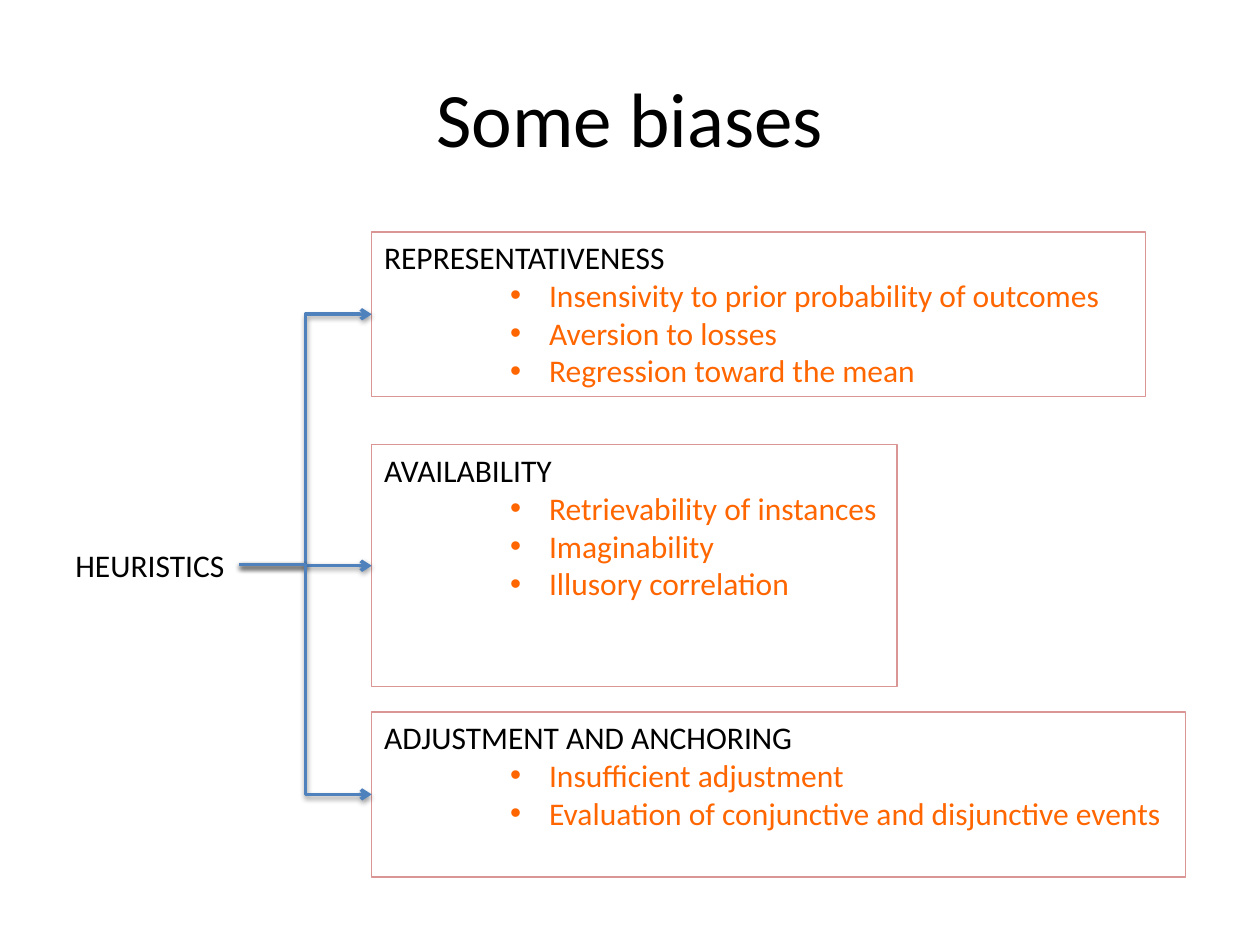
from lxml import etree
from pptx import Presentation
from pptx.dml.color import RGBColor
from pptx.enum import shapes, text
from pptx.oxml import ns
from pptx.util import Inches, Pt

FONT = "Calibri"
BLACK, ORANGE, PINK, BLUE = "000000", "FF6600", "D99694", "4F81BD"
BOX_LEFT = 2.95
BRANCH_START = (1.9, 4.48)

# top, width, height, heading, biases
HEURISTICS = [
    (1.84, 6.14, 1.31, "REPRESENTATIVENESS",
     ["Insensivity to prior probability of outcomes", "Aversion to losses",
      "Regression toward the mean"]),
    (3.53, 4.17, 1.92, "AVAILABILITY",
     ["Retrievability of instances", "Imaginability", "Illusory correlation"]),
    (5.65, 6.46, 1.31, "ADJUSTMENT AND ANCHORING",
     ["Insufficient adjustment",
      "Evaluation of conjunctive and disjunctive events"]),
]


def color(value):
    return RGBColor.from_string(value)


def add_xml(parent, tag, **attributes):
    element = etree.SubElement(parent, ns.qn(tag))
    for name, value in attributes.items():
        element.set(name, str(value))
    return element


def format_runs(paragraph, size, value):
    for run in paragraph.runs:
        run.font.name = FONT
        run.font.size = Pt(size)
        run.font.color.rgb = color(value)


def add_label(slide, left, top, width, height, content, size, align, wrap):
    box = slide.shapes.add_textbox(*map(Inches, (left, top, width, height)))
    frame = box.text_frame
    frame.text = content
    frame.word_wrap = wrap
    frame.vertical_anchor = text.MSO_ANCHOR.MIDDLE
    frame.paragraphs[0].alignment = align
    format_runs(frame.paragraphs[0], size, BLACK)


def add_bullet(paragraph):
    paragraph.level = 2
    properties = paragraph._p.get_or_add_pPr()
    properties.set("marL", str(Inches(1.31)))
    properties.set("indent", str(Inches(-0.31)))
    add_xml(properties, "a:buFont", typeface="Arial")
    add_xml(properties, "a:buChar", char="•")


def add_bias_box(slide, top, width, height, heading, biases):
    box = slide.shapes.add_shape(
        shapes.MSO_SHAPE.RECTANGLE,
        *map(Inches, (BOX_LEFT, top, width, height)))
    box.shadow.inherit = False
    box.fill.background()
    box.line.color.rgb = color(PINK)
    box.line.width = Pt(0.75)
    frame = box.text_frame
    frame.word_wrap = True
    frame.vertical_anchor = text.MSO_ANCHOR.TOP
    frame.text = "\n".join([heading, *biases])
    for index, paragraph in enumerate(frame.paragraphs):
        paragraph.alignment = text.PP_ALIGN.LEFT
        if index:
            add_bullet(paragraph)
        format_runs(paragraph, 18, ORANGE if index else BLACK)


def add_branch(slide, end_y):
    """Draw an elbow arrow with a soft shadow from the root label to a box."""
    branch = slide.shapes.add_connector(
        shapes.MSO_CONNECTOR.ELBOW,
        *map(Inches, (*BRANCH_START, BOX_LEFT, end_y)))
    branch.line.color.rgb = color(BLUE)
    branch.line.width = Pt(2)
    add_xml(branch.line._get_or_add_ln(), "a:tailEnd", type="arrow")
    effects = add_xml(branch._element.spPr, "a:effectLst")
    shadow = add_xml(effects, "a:outerShdw", blurRad=Pt(3.1), dist=Pt(1.6),
                     dir=90 * 60000, rotWithShape=0)
    shadow_color = add_xml(shadow, "a:srgbClr", val=BLACK)
    add_xml(shadow_color, "a:alpha", val=38000)


def main():
    presentation = Presentation()
    presentation.slide_width = Inches(10)
    presentation.slide_height = Inches(7.5)
    slide = presentation.slides.add_slide(presentation.slide_layouts[6])

    add_label(slide, 0.5, 0.3, 9, 1.25, "Some biases", 44,
              text.PP_ALIGN.CENTER, True)
    add_label(slide, 0.5, 4.28, 1.4, 0.4, "HEURISTICS", 18,
              text.PP_ALIGN.LEFT, False)
    for heuristic in HEURISTICS:
        add_bias_box(slide, *heuristic)
    for top, _, height, _, _ in HEURISTICS:
        add_branch(slide, top + height / 2)

    presentation.save("out.pptx")


if __name__ == "__main__":
    main()
